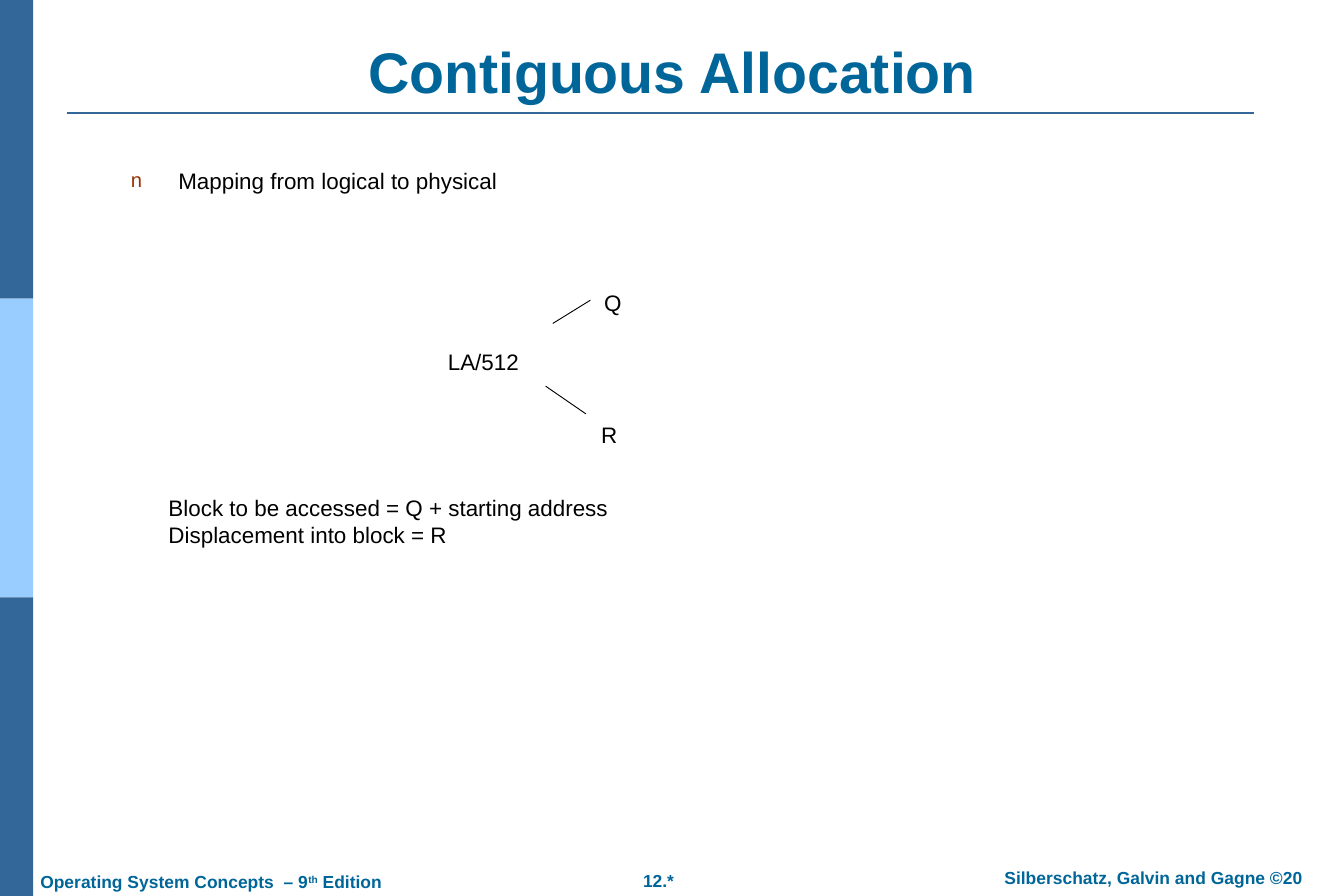
from pptx import Presentation
from pptx.dml.color import RGBColor as RGB
from pptx.enum.shapes import MSO_CONNECTOR as Conn, MSO_SHAPE as Shape
from pptx.enum.text import MSO_ANCHOR as Anchor, PP_ALIGN as Align
from pptx.oxml.ns import qn
from pptx.util import Inches, Pt
from lxml import etree

COLORS = {
    "dark": "336699",
    "light": "99CCFF",
    "teal": "006699",
    "rust": "993300",
    "black": "000000",
}


def color(name):
    return RGB.from_string(COLORS[name])


def add_bar(slide, top, height, fill):
    bar = slide.shapes.add_shape(
        Shape.RECTANGLE, 0, Inches(top), Inches(0.37), Inches(height))
    bar.shadow.inherit = False
    bar.fill.solid()
    bar.fill.fore_color.rgb = color(fill)
    bar.line.fill.background()


def add_line(slide, start, end, tint="black", width=0.75):
    ends = [Inches(v) for v in (*start, *end)]
    line = slide.shapes.add_connector(Conn.STRAIGHT, *ends)
    line.line.color.rgb = color(tint)
    line.line.width = Pt(width)
    etree.SubElement(line._element.spPr, qn("a:effectLst"))


def style(run, size, tint, bold):
    font = run.font
    font.name = "Arial"
    font.size = Pt(size)
    font.bold = bold
    font.color.rgb = color(tint)


def add_text(slide, place, text, size=18, tint="black", bold=False,
             align=Align.LEFT, anchor=Anchor.TOP):
    box = slide.shapes.add_textbox(*[Inches(v) for v in place])
    frame = box.text_frame
    frame.word_wrap = True
    frame.vertical_anchor = anchor
    frame.margin_left = frame.margin_right = Inches(0.14)
    frame.margin_top = frame.margin_bottom = Inches(0.07)
    frame.text = text
    for para in frame.paragraphs:
        para.alignment = align
        for run in para.runs:
            style(run, size, tint, bold)
    return frame


def indent(para, left, first):
    props = para._p.get_or_add_pPr()
    props.set("marL", str(Inches(left)))
    props.set("indent", str(Inches(first)))
    return props


def add_bullet(para):
    props = indent(para, 0.53, -0.53)
    tint = etree.SubElement(props, qn("a:buClr"))
    etree.SubElement(tint, qn("a:srgbClr"), val=COLORS["rust"])
    etree.SubElement(props, qn("a:buSzPct"), val="90000")
    etree.SubElement(props, qn("a:buFont"), typeface="Arial")
    etree.SubElement(props, qn("a:buChar"), char="n")


def add_footer(slide):
    look = {"size": 14, "tint": "teal", "bold": True}
    add_text(slide, (6.95, 9.64, 0.8, 0.38), "12.*",
             align=Align.CENTER, **look)
    add_text(slide, (10.65, 9.61, 4.45, 0.38),
             "Silberschatz, Galvin and Gagne ©20", align=Align.CENTER, **look)
    book = add_text(slide, (0.31, 9.65, 4.13, 0.38),
                    "Operating System Concepts  – 9", **look)
    for part in ("th", " Edition"):
        run = book.paragraphs[0].add_run()
        run.text = part
        style(run, **look)
        if part == "th":
            run._r.get_or_add_rPr().set("baseline", "30000")


def add_map(slide):
    # Address divided into quotient and remainder
    labels = [
        ("LA/512", (4.36, 3.81, 2.07, 0.45)),
        ("Q", (6.18, 3.15, 1.32, 0.45)),
        ("R", (6.28, 4.63, 1.04, 0.45)),
    ]
    for text, place in labels:
        add_text(slide, place, text, align=Align.CENTER, anchor=Anchor.MIDDLE)
    add_line(slide, (6.17, 3.61), (6.59, 3.35))
    add_line(slide, (6.09, 4.31), (6.54, 4.62))


def main():
    deck = Presentation()
    deck.slide_width, deck.slide_height = Inches(15), Inches(10)
    slide = deck.slides.add_slide(deck.slide_layouts[6])

    # Side bars and title rule
    third = 10 / 3
    for i, fill in enumerate(("dark", "light", "dark")):
        add_bar(slide, i * third, third, fill)
    add_line(slide, (0.75, 1.26), (14, 1.26), "dark", 1.5)
    add_footer(slide)

    # Title and topic
    add_text(slide, (0.75, 0.4, 13.5, 0.84), "Contiguous Allocation", 46,
             "teal", True, Align.CENTER, Anchor.BOTTOM)
    topic = add_text(slide, (1.32, 1.8, 12.06, 5.09),
                     "Mapping from logical to physical")
    add_bullet(topic.paragraphs[0])

    add_map(slide)

    # Resulting block and offset
    result = add_text(slide, (1.04, 5.45, 11.95, 1.2),
                      "Block to be accessed = Q + starting address\n"
                      "Displacement into block = R")
    for para in result.paragraphs:
        indent(para, 0.71, -0.01)

    deck.save("out.pptx")


if __name__ == "__main__":
    main()
